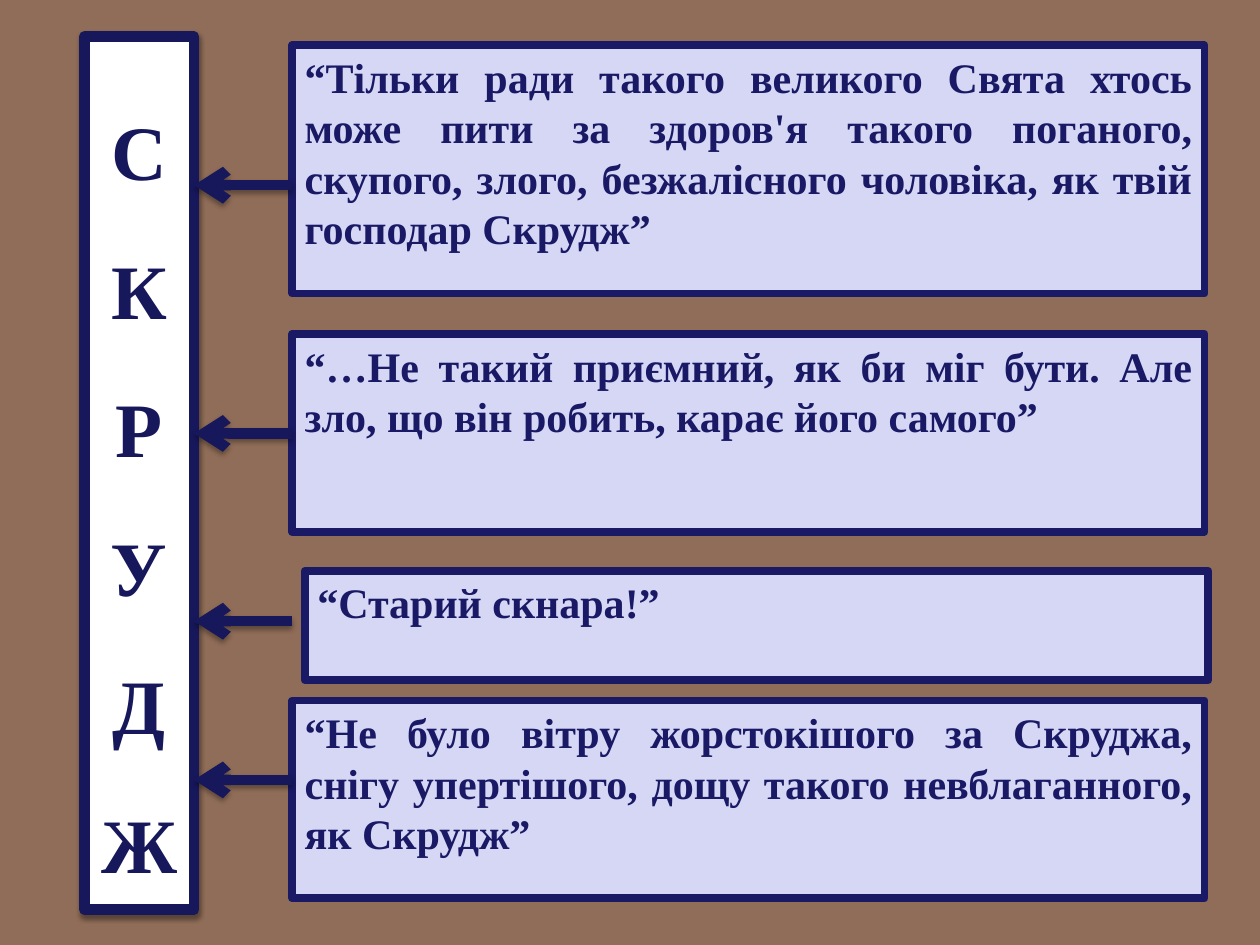
import pptx
import pptx.util
import pptx.dml.color
import pptx.enum.shapes
import pptx.enum.text
import pptx.oxml

Inches, Pt = pptx.util.Inches, pptx.util.Pt
ALIGN = pptx.enum.text.PP_ALIGN
ANCHOR = pptx.enum.text.MSO_ANCHOR
NS = 'xmlns:a="http://schemas.openxmlformats.org/drawingml/2006/main"'

COLORS = {"back": "906D58", "white": "FFFFFF", "navy": "17175C",
          "ink": "191966", "pale": "D6D6F5"}
FONT = "Times New Roman"
NAME = "СКРУДЖ"
BAR = (0.67, 0.29, 0.87, 6.93)
LEFT, WIDTH = 2.32, 7.24
QUOTES = [
    ("“Тільки ради такого великого Свята хтось може пити за здоров'я такого "
     "поганого, скупого, злого, безжалісного чоловіка, як твій господар Скрудж”",
     (LEFT, 0.36, WIDTH, 1.97), 1.47),
    ("“…Не такий приємний, як би міг бути. Але зло, що він робить, карає його самого”",
     (LEFT, 2.65, WIDTH, 1.57), 3.44),
    ("“Старий скнара!”", (2.42, 4.53, 7.17, 0.87), 4.93),
    ("“Не було вітру жорстокішого за Скруджа, снігу упертішого, дощу такого "
     "невблаганного, як Скрудж”", (LEFT, 5.56, WIDTH, 1.57), 6.19),
]


def color(name):
    return pptx.dml.color.RGBColor.from_string(COLORS[name])


def stroke(shape, name, width):
    shape.line.color.rgb = color(name)
    shape.line.width = Pt(width)


def shade(shape, dist, alpha):
    shape._element.spPr.append(pptx.oxml.parse_xml(
        f'<a:effectLst {NS}><a:outerShdw blurRad="{Pt(3.1)}" dist="{Pt(dist)}" '
        f'dir="5400000" rotWithShape="0"><a:srgbClr val="000000">'
        f'<a:alpha val="{alpha * 1000}"/></a:srgbClr></a:outerShdw></a:effectLst>'))


def add_box(slide, place, fill, ink, width, lines, size, align, anchor, gap):
    box = slide.shapes.add_shape(
        pptx.enum.shapes.MSO_SHAPE.RECTANGLE, *map(Inches, place))
    box.fill.solid()
    box.fill.fore_color.rgb = color(fill)
    stroke(box, ink, width)
    frame = box.text_frame
    frame.word_wrap = True
    frame.vertical_anchor = anchor
    frame.text = "\n".join(lines)
    for para in frame.paragraphs:
        para.alignment = align
        para.line_spacing = gap
        para.font.name = FONT
        para.font.size = Pt(size)
        para.font.bold = True
        para.font.color.rgb = color(ink)
    return box


def add_arrow(slide, y):
    arrow = slide.shapes.add_connector(
        pptx.enum.shapes.MSO_CONNECTOR.STRAIGHT,
        Inches(LEFT), Inches(y), Inches(BAR[0] + BAR[2]), Inches(y))
    stroke(arrow, "navy", 6)
    arrow.line._get_or_add_ln().append(
        pptx.oxml.parse_xml(f'<a:tailEnd {NS} type="arrow"/>'))
    shade(arrow, 1.8, 35)


def main():
    deck = pptx.Presentation()
    deck.slide_width, deck.slide_height = Inches(10), Inches(7.5)
    slide = deck.slides.add_slide(deck.slide_layouts[6])
    slide.background.fill.solid()
    slide.background.fill.fore_color.rgb = color("back")
    bar = add_box(slide, BAR, "white", "navy", 6, NAME, 44,
                  ALIGN.CENTER, ANCHOR.MIDDLE, 1.5)
    shade(bar, 1.6, 38)
    for text, place, y in QUOTES:
        box = add_box(slide, place, "pale", "ink", 4.5, [text], 24,
                      ALIGN.JUSTIFY, ANCHOR.TOP, 1.0)
        box.shadow.inherit = False
    for text, place, y in QUOTES:
        add_arrow(slide, y)
    deck.save("out.pptx")


if __name__ == "__main__":
    main()
